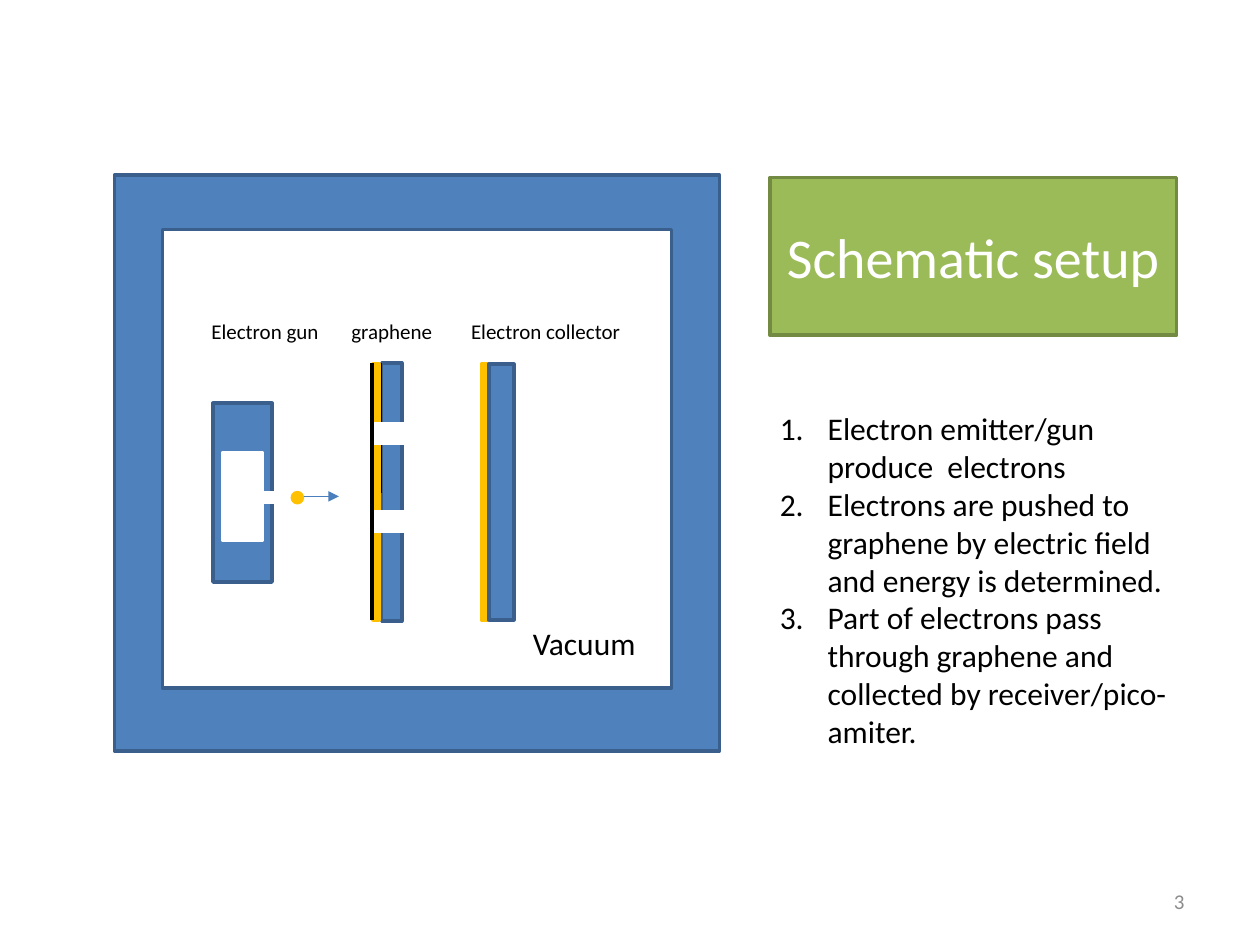
"""Build the schematic setup slide of an electron gun, graphene and collector."""

from dataclasses import dataclass

from lxml.etree import SubElement
from pptx import Presentation
from pptx.dml.color import RGBColor
from pptx.enum.shapes import MSO_CONNECTOR, MSO_SHAPE
from pptx.enum.text import MSO_ANCHOR, MSO_AUTO_SIZE, PP_ALIGN
from pptx.oxml.ns import qn
from pptx.shapes.autoshape import Shape
from pptx.slide import Slide
from pptx.util import Inches, Pt


@dataclass(frozen=True)
class Theme:
    font: str = "Calibri"
    title_size: int = 32
    body_size: int = 18
    label_size: int = 12
    outline: float = 2
    white: str = "FFFFFF"
    black: str = "000000"
    grey: str = "8C8C8C"
    gold: str = "FFC000"
    blue: str = "4F81BD"
    blue_edge: str = "3A5F8C"
    green: str = "9BBB59"
    green_edge: str = "738A42"
    arrow: str = "4B7EBC"


THEME = Theme()


@dataclass(frozen=True)
class Block:
    left: float
    top: float
    width: float
    height: float
    fill: str
    edge: str
    kind: MSO_SHAPE = MSO_SHAPE.RECTANGLE


@dataclass(frozen=True)
class Stroke:
    start: tuple[float, float]
    end: tuple[float, float]
    color: str
    weight: float
    arrow: bool = False


@dataclass(frozen=True)
class Label:
    text: str
    left: float
    top: float
    width: float
    height: float
    size: int


def metal(left: float, top: float, width: float, height: float) -> Block:
    return Block(left, top, width, height, THEME.blue, THEME.blue_edge)


def opening(left: float, top: float, width: float, height: float) -> Block:
    return Block(left, top, width, height, THEME.white, THEME.white)


def coating(left: float) -> Block:
    return Block(left, 2.89, 0.05, 2.03, THEME.gold, THEME.gold)


TITLE = Block(6.11, 1.41, 3.23, 1.25, THEME.green, THEME.green_edge)
CHAMBER = [
    metal(0.91, 1.39, 4.8, 4.57),
    Block(1.29, 1.82, 4.04, 3.64, THEME.white, THEME.blue_edge),
]
GRAPHENE_SUPPORT = metal(3.03, 2.88, 0.16, 2.05)
SUPPORT_EDGE = Stroke((3.03, 2.88), (3.03, 3.91), THEME.black, 0.75)
APPARATUS = [
    coating(3.82),
    metal(3.88, 2.89, 0.2, 2.03),
    coating(2.96),
    opening(2.87, 3.36, 0.39, 0.16),
    opening(2.95, 4.06, 0.39, 0.16),
    metal(1.69, 3.2, 0.47, 1.42),
    opening(1.77, 3.59, 0.31, 0.7),
    opening(2.01, 3.91, 0.39, 0.08),
    Block(2.32, 3.91, 0.08, 0.08, THEME.gold, THEME.gold, MSO_SHAPE.OVAL),
]
STROKES = [
    Stroke((2.95, 2.88), (2.95, 4.92), THEME.black, 2.25),
    Stroke((2.41, 3.94), (2.69, 3.94), THEME.arrow, 0.75, arrow=True),
]
LABELS = [
    Label("Electron gun", 1.58, 2.48, 1.06, 0.3, THEME.label_size),
    Label("graphene", 2.69, 2.48, 0.85, 0.3, THEME.label_size),
    Label("Electron collector", 3.64, 2.48, 1.4, 0.3, THEME.label_size),
    Label("Vacuum", 4.13, 4.9, 1.09, 0.4, THEME.body_size),
]
STEPS = [
    "Electron emitter/gun produce  electrons",
    "Electrons are pushed to graphene by electric field and energy is determined.",
    "Part of electrons pass through graphene and collected by receiver/pico-amiter.",
]


def draw_block(page: Slide, block: Block) -> Shape:
    shape = page.shapes.add_shape(
        block.kind, Inches(block.left), Inches(block.top),
        Inches(block.width), Inches(block.height),
    )
    shape.shadow.inherit = False
    shape.fill.solid()
    shape.fill.fore_color.rgb = RGBColor.from_string(block.fill)
    shape.line.color.rgb = RGBColor.from_string(block.edge)
    shape.line.width = Pt(THEME.outline)
    return shape


def draw_stroke(page: Slide, stroke: Stroke) -> None:
    connector = page.shapes.add_connector(
        MSO_CONNECTOR.STRAIGHT, *map(Inches, stroke.start + stroke.end)
    )
    connector.line.color.rgb = RGBColor.from_string(stroke.color)
    connector.line.width = Pt(stroke.weight)
    if stroke.arrow:
        SubElement(connector.line._get_or_add_ln(), qn("a:tailEnd"), type="triangle")
    SubElement(connector._element.spPr, qn("a:effectLst"))


def add_box(page: Slide, left: float, top: float, width: float, height: float) -> Shape:
    return page.shapes.add_textbox(
        Inches(left), Inches(top), Inches(width), Inches(height)
    )


def write_text(
    box: Shape, *lines: str, size: int, color: str = THEME.black,
    align: PP_ALIGN = PP_ALIGN.LEFT, anchor: MSO_ANCHOR = MSO_ANCHOR.TOP,
    wrap: bool = True, grow: bool = False, numbered: bool = False,
) -> None:
    frame = box.text_frame
    frame.word_wrap = wrap
    frame.vertical_anchor = anchor
    frame.auto_size = MSO_AUTO_SIZE.SHAPE_TO_FIT_TEXT if grow else MSO_AUTO_SIZE.NONE
    for index, line in enumerate(lines):
        para = frame.add_paragraph() if index else frame.paragraphs[0]
        para.alignment = align
        if numbered:
            properties = para._p.get_or_add_pPr()
            properties.set("marL", str(Inches(0.38)))
            properties.set("indent", str(Inches(-0.38)))
            SubElement(properties, qn("a:buFont"), typeface="+mj-lt")
            SubElement(properties, qn("a:buAutoNum"), type="arabicPeriod")
        span = para.add_run()
        span.text = line
        span.font.name = THEME.font
        span.font.size = Pt(size)
        span.font.color.rgb = RGBColor.from_string(color)


def main() -> None:
    deck = Presentation()
    deck.slide_width, deck.slide_height = Inches(10), Inches(7.5)
    page = deck.slides.add_slide(deck.slide_layouts[6])

    write_text(
        draw_block(page, TITLE), "Schematic setup", size=THEME.title_size,
        color=THEME.white, align=PP_ALIGN.CENTER, anchor=MSO_ANCHOR.MIDDLE,
    )
    for block in [*CHAMBER, GRAPHENE_SUPPORT]:
        draw_block(page, block)
    draw_stroke(page, SUPPORT_EDGE)
    for block in APPARATUS:
        draw_block(page, block)
    for stroke in STROKES:
        draw_stroke(page, stroke)
    for label in LABELS:
        box = add_box(page, label.left, label.top, label.width, label.height)
        write_text(box, label.text, size=label.size, wrap=False, grow=True)

    steps_box = add_box(page, 6.09, 3.2, 3.41, 2.83)
    write_text(steps_box, *STEPS, size=THEME.body_size, grow=True, numbered=True)
    number_box = add_box(page, 7.17, 6.95, 2.33, 0.4)
    write_text(
        number_box, "3", size=THEME.label_size, color=THEME.grey,
        align=PP_ALIGN.RIGHT, anchor=MSO_ANCHOR.MIDDLE,
    )
    deck.save("out.pptx")


if __name__ == "__main__":
    main()
